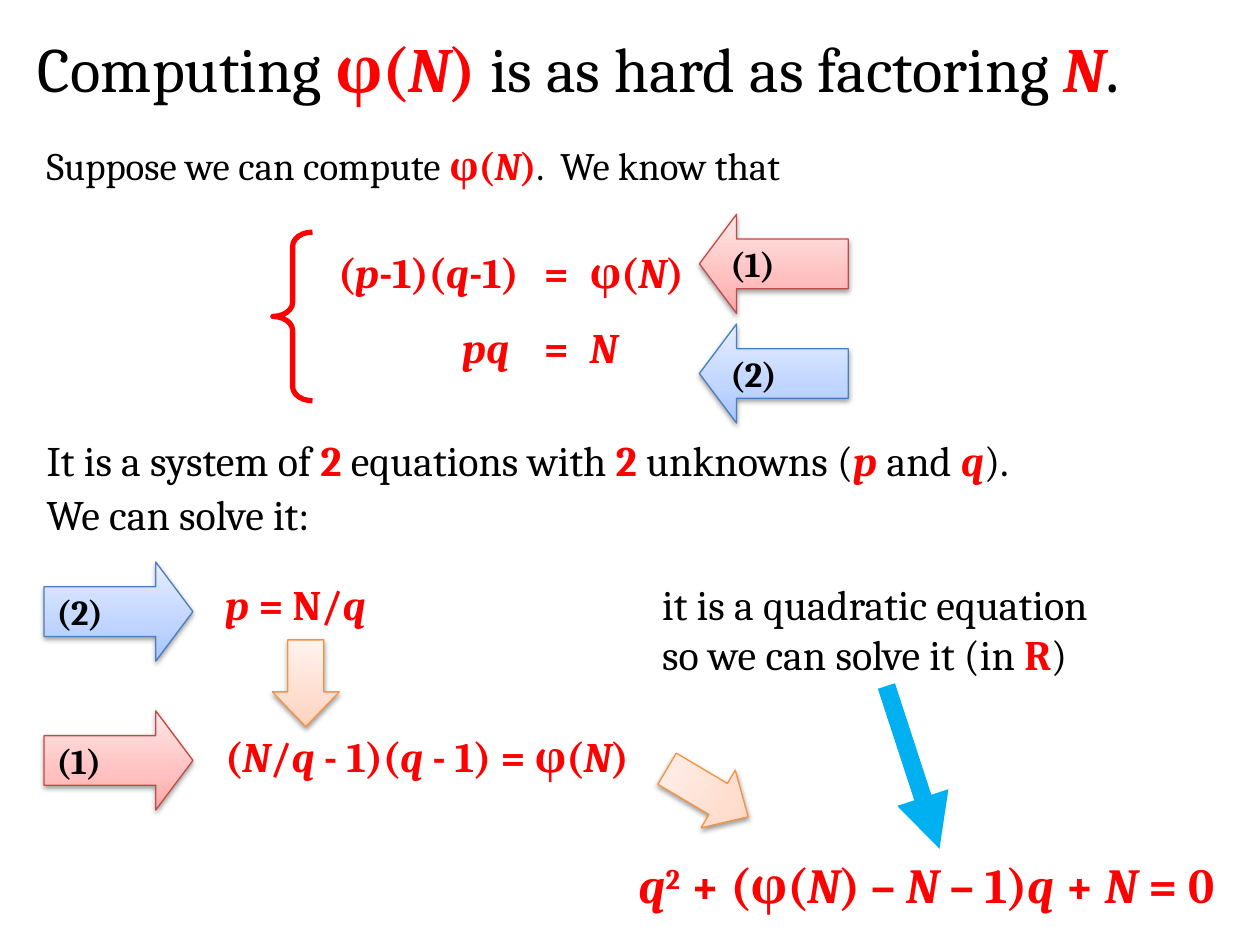
from copy import deepcopy

from lxml import etree
from pptx import Presentation
from pptx import util as u
from pptx.dml.color import RGBColor
from pptx.enum import shapes, text
from pptx.oxml import ns

FONT = "Cambria"
COLORS = {"ink": "000000", "formula": "FF0000", "pointer": "00B0F0"}
ARROWS = {
    "red": ("BF4C48", ("FFA6A5", "FFC0BF", "FFE7E7")),
    "blue": ("4B7EBC", ("A4C4FF", "BFD4FF", "E6EEFF")),
    "orange": ("F69240", ("FFD2BD", "FFDED0", "FFF2ED")),
}
STOPS = (0, 0.35, 1)
KIND = shapes.MSO_SHAPE
ALIGN = text.PP_ALIGN


def rgb(value):
    return RGBColor.from_string(value)


def cm(*lengths):
    return [u.Cm(length) for length in lengths]


def write(para, markup, size, align=ALIGN.LEFT):
    """Asterisks enclose bold formula text, underscores italics, carets superscripts."""
    para.alignment = align
    para.font.name = FONT
    para.font.size = u.Pt(size)
    for red, phrase in enumerate(markup.split("*")):
        for slanted, part in enumerate(phrase.split("_")):
            for raised, words in enumerate(part.split("^")):
                if not words:
                    continue
                span = para.add_run()
                span.text = words
                span.font.bold = bool(red % 2)
                span.font.italic = bool(slanted % 2)
                span.font.color.rgb = rgb(COLORS["formula" if red % 2 else "ink"])
                if raised % 2:
                    span.font._element.set("baseline", "30000")


def add_text(page, box, lines, size, spacing=None, before=0):
    frame = page.shapes.add_textbox(*cm(*box)).text_frame
    frame.word_wrap = True
    for index, line in enumerate(lines):
        para = frame.paragraphs[0] if index == 0 else frame.add_paragraph()
        write(para, line, size)
        para.line_spacing = spacing
        if index:
            para.space_before = u.Pt(before)


def add_arrow(page, kind, box, theme, adjustments, label=None, rotation=0):
    arrow = page.shapes.add_shape(kind, *cm(*box))
    arrow.rotation = rotation
    for index, value in enumerate(adjustments):
        arrow.adjustments[index] = value
    edge, shades = ARROWS[theme]
    arrow.line.color.rgb = rgb(edge)
    arrow.line.width = u.Pt(0.75)
    arrow.fill.gradient()
    arrow.fill.gradient_angle = 90
    stop_list = arrow._element.spPr.find(".//" + ns.qn("a:gsLst"))
    stop_list.insert(1, deepcopy(stop_list[0]))
    for stop, position, shade in zip(arrow.fill.gradient_stops, STOPS, shades):
        stop.position = position
        stop.color.rgb = rgb(shade)
    arrow.shadow.inherit = False
    effects = arrow._element.spPr.find(ns.qn("a:effectLst"))
    shadow = etree.SubElement(effects, ns.qn("a:outerShdw"), blurRad="39370",
                              dist="20320", dir="5400000", rotWithShape="0")
    tint = etree.SubElement(shadow, ns.qn("a:srgbClr"), val=COLORS["ink"])
    etree.SubElement(tint, ns.qn("a:alpha"), val="38000")
    if label:
        frame = arrow.text_frame
        frame.vertical_anchor = text.MSO_ANCHOR.MIDDLE
        write(frame.paragraphs[0], label, 20)
        frame.paragraphs[0].font.bold = True
        frame.paragraphs[0].runs[0].font.bold = True


def add_label_arrow(page, kind, left, top, theme, label):
    add_arrow(page, kind, (left, top, 3, 2), theme, (0.5, 0.375), label)


def add_step_arrow(page, box, rotation=0):
    add_arrow(page, KIND.DOWN_ARROW, box, "orange", (0.54, 0.52), rotation=rotation)


def add_title(page, box):
    title = page.shapes.title
    title.left, title.top, title.width, title.height = cm(*box)
    frame = title.text_frame
    frame.auto_size = text.MSO_AUTO_SIZE.NONE
    frame.vertical_anchor = text.MSO_ANCHOR.MIDDLE
    para = frame.paragraphs[0]
    write(para, "Computing *φ(_N_)* is as hard as factoring *_N_*.", 36)
    para.runs[-1].font.size = u.Pt(40)


def add_system(page, left, top):
    rows = (("*(_p_-1)(_q_-1)*", "*=*", "*φ(_N_)*"), ("*_pq _*", "*=*", "*_N_*"))
    widths = (5.21, 0.92, 3.06)
    aligns = (ALIGN.RIGHT, ALIGN.CENTER, ALIGN.LEFT)
    table = page.shapes.add_table(2, 3, *cm(left, top + 0.25, sum(widths), 3)).table
    table.first_row = table.horz_banding = False
    for column, width in zip(table.columns, widths):
        column.width = u.Cm(width)
    for r, row in enumerate(rows):
        for c, words in enumerate(row):
            cell = table.cell(r, c)
            cell.fill.background()
            write(cell.text_frame.paragraphs[0], words, 24, aligns[c])
            cell.text_frame.paragraphs[0].space_before = u.Pt(5)
    brace = page.shapes.add_shape(KIND.LEFT_BRACE, *cm(left, top, 0.8, 3.4))
    brace.adjustments[0] = 0.355
    brace.fill.background()
    brace.line.color.rgb = rgb(COLORS["formula"])
    brace.line.width = u.Pt(3)
    brace.shadow.inherit = False
    for offset, theme, label in ((-0.36, "red", "(1)"), (1.85, "blue", "(2)")):
        add_label_arrow(page, KIND.LEFT_ARROW, left + 8.6, top + offset, theme, label)


def add_derivation(page, left, top):
    add_text(page, (left + 3.4, top + 0.2, 9.3, 4.37),
             ["*_p_ = N/_q_*", "*(_N_/_q_ - 1)(_q _- 1) = φ(_N_)*"], 24, before=58)
    for offset, theme, label in ((0, "blue", "(2)"), (3, "red", "(1)")):
        add_label_arrow(page, KIND.RIGHT_ARROW, left, top + offset, theme, label)
    add_step_arrow(page, (left + 4.6, top + 1.57, 1.35, 1.75))
    add_step_arrow(page, (left + 12.7, top + 3.7, 1.35, 1.9), 300.7)


def add_conclusion(page, left, top):
    add_text(page, (left + 0.48, top, 9.6, 2.3),
             ["it is a quadratic equation", "so we can solve it (in *R*)"], 24)
    add_text(page, (left, top + 5.58, 12.7, 1.45),
             ["*_q_^2^ + (φ(_N_) – _N_ – 1)_q _+ _N _= 0*"], 28)
    pointer = page.shapes.add_connector(
        shapes.MSO_CONNECTOR.STRAIGHT,
        *cm(left + 5.25, top + 2.3, left + 6.32, top + 5.58))
    pointer.line.color.rgb = rgb(COLORS["pointer"])
    pointer.line.width = u.Pt(10.25)
    etree.SubElement(pointer.line._get_or_add_ln(), ns.qn("a:tailEnd"), type="triangle")
    etree.SubElement(pointer._element.spPr, ns.qn("a:effectLst"))


def main():
    deck = Presentation()
    deck.slide_width, deck.slide_height = cm(25.4, 19.05)
    page = deck.slides.add_slide(deck.slide_layouts[5])
    add_title(page, (0.51, 0, 24.4, 2.6))
    add_text(page, (0.69, 2.92, 19.8, 1),
             ["Suppose we can compute *φ(_N_)*.\u00a0 We know that".replace("\u00a0", " ")],
             22.2, 0.8)
    add_system(page, 5.5, 4.68)
    add_text(page, (0.69, 8.74, 22.6, 2),
             ["It is a system of *2* equations with *2* unknowns (*_p_* and *_q_*).",
              "We can solve it:"], 24, 0.9, 5)
    add_derivation(page, 0.89, 11.33)
    add_conclusion(page, 12.62, 11.53)
    deck.save("out.pptx")


if __name__ == "__main__":
    main()
